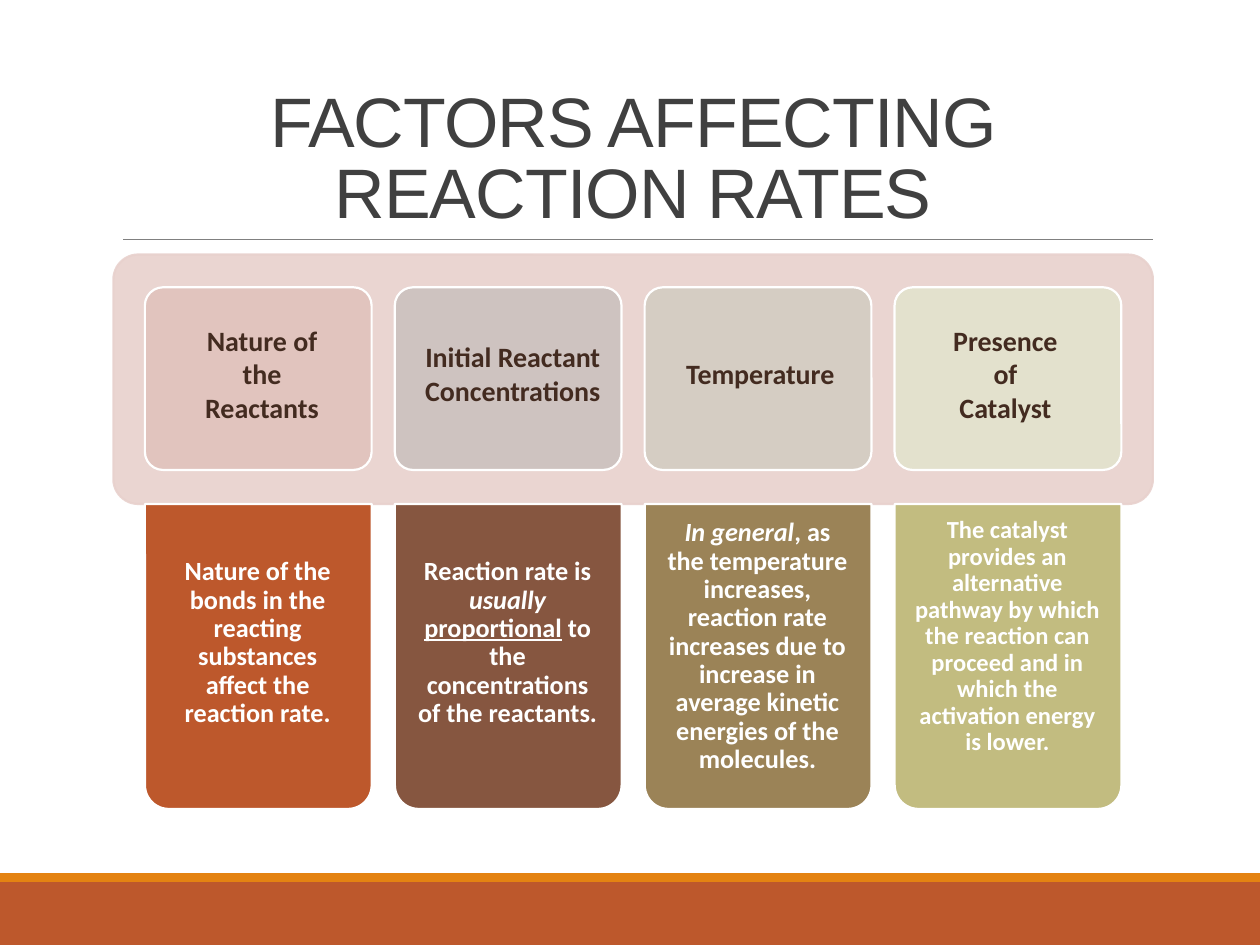
from dataclasses import dataclass

from lxml.etree import SubElement
from pptx import Presentation
from pptx.dml.color import RGBColor
from pptx.enum.shapes import MSO_CONNECTOR, MSO_SHAPE as Shape
from pptx.enum.text import MSO_ANCHOR as Anchor, PP_ALIGN as Align
from pptx.oxml.ns import qn
from pptx.util import Inches, Pt


@dataclass(frozen=True)
class Theme:
    title: str = "404040"
    label: str = "432B20"
    white: str = "FFFFFF"
    rule: str = "808080"
    panel: str = "E8D1CD"
    band: str = "BD582C"
    stripe: str = "E48312"
    title_font: str = "Arial"
    body_font: str = "Calibri"
    title_size: int = 40
    label_size: int = 16
    body_size: int = 15
    small_size: int = 14


THEME = Theme()
COLUMN_LEFT, COLUMN_WIDTH = 1.15, 1.8
COLUMN_PITCH = (7.1 - COLUMN_LEFT) / 3


@dataclass(frozen=True)
class Factor:
    label: str
    label_left: float
    label_width: float
    tint: str
    color: str
    runs: tuple  # (text, style) pairs; style is "", "italic" or "underline"
    size: int = THEME.body_size
    inset: float = 0.12
    top_inset: float = 0.12


FACTORS = (
    Factor("Nature of the Reactants", 1.51, 1.14, "E1C4BE", "BD582C",
           (("Nature of the bonds in the reacting substances affect the reaction rate.", ""),),
           top_inset=0.43),
    Factor("Initial Reactant Concentrations", 3.27, 1.6, "CEC3C0", "865640",
           (("Reaction rate is ", ""), ("usually ", "italic"), ("proportional", "underline"),
            (" to the concentrations of the reactants.", "")),
           top_inset=0.43),
    Factor("Temperature", 5.25, 1.57, "D5CDC3", "9B8357",
           (("In general", "italic"),
            (", as the temperature increases, reaction rate increases due to increase in "
             "average kinetic energies of the molecules.", ""))),
    Factor("Presence of Catalyst", 7.41, 1.14, "E3E1CD", "C2BC80",
           (("The catalyst provides an alternative pathway by which the reaction can "
             "proceed and in which the activation energy is lower.", ""),),
           size=THEME.small_size, inset=0.11, top_inset=0.11),
)


def rgb(color):
    return RGBColor.from_string(color)


def add_block(s, kind, box, fill, line=None, adjustments=(), rotation=0, opacity=None):
    sp = s.shapes.add_shape(kind, *map(Inches, box))
    sp.shadow.inherit = False
    sp.rotation = rotation
    for i, value in enumerate(adjustments):
        sp.adjustments[i] = value
    sp.fill.solid()
    sp.fill.fore_color.rgb = rgb(fill)
    if line:
        sp.line.color.rgb = rgb(line)
        sp.line.width = Pt(1.25)
    else:
        sp.line.fill.background()
    if opacity:
        for color in sp._element.spPr.iter(qn("a:srgbClr")):
            SubElement(color, qn("a:alpha"), val=str(opacity * 1000))


def add_rule(s, left, right, y):
    line = s.shapes.add_connector(MSO_CONNECTOR.STRAIGHT, *map(Inches, (left, y, right, y)))
    line.line.color.rgb = rgb(THEME.rule)
    line.line.width = Pt(0.5)
    SubElement(line._element.spPr, qn("a:effectLst"))


def add_run(p, text, size, color, font=THEME.body_font, bold=True, style=""):
    r = p.add_run()
    r.text = text
    r.font.name, r.font.size, r.font.bold = font, Pt(size), bold
    r.font.color.rgb = rgb(color)
    if style:
        setattr(r.font, style, True)
    return r


def add_text(s, box, runs, size, color, insets=(0.1, 0.05, 0.1, 0.05),
             anchor=Anchor.TOP, line_spacing=1.0):
    """Add a centred text box; insets run left, top, right, bottom."""
    tf = s.shapes.add_textbox(*map(Inches, box)).text_frame
    tf.word_wrap = True
    tf.vertical_anchor = anchor
    tf.margin_left, tf.margin_top, tf.margin_right, tf.margin_bottom = map(Inches, insets)
    p = tf.paragraphs[0]
    p.alignment = Align.CENTER
    p.line_spacing = line_spacing
    for text, style in runs:
        add_run(p, text, size, color, style=style)


def set_title(s, text):
    title = s.shapes.title
    title.left, title.top, title.width, title.height = map(Inches, (0.9, 0.31, 8.25, 1.59))
    tf = title.text_frame
    tf.word_wrap = True
    tf.vertical_anchor = Anchor.BOTTOM
    p = tf.paragraphs[0]
    p.alignment = Align.CENTER
    p.line_spacing = 0.85
    r = add_run(p, text, THEME.title_size, THEME.title, THEME.title_font, bold=False)
    r.font._element.set("spc", "-50")


def add_factor(s, left, factor):
    add_block(s, Shape.ROUNDED_RECTANGLE, (left, 2.28, COLUMN_WIDTH, 1.45),
              factor.tint, THEME.white, (0.1,))
    add_block(s, Shape.ROUND_2_SAME_RECTANGLE, (left, 4, COLUMN_WIDTH, 2.42),
              factor.color, THEME.white, (0.105, 0), rotation=180)
    add_text(s, (left + 0.05, 4, 1.69, 2.36), factor.runs, factor.size, THEME.white,
             (factor.inset, factor.top_inset, factor.inset, factor.inset), line_spacing=0.9)
    add_text(s, (factor.label_left, 2.51, factor.label_width, 0.91), [(factor.label, "")],
             THEME.label_size, THEME.label, anchor=Anchor.MIDDLE)


def main():
    prs = Presentation()
    prs.slide_width, prs.slide_height = Inches(10), Inches(7.5)
    s = prs.slides.add_slide(prs.slide_layouts[5])
    add_block(s, Shape.RECTANGLE, (0, 7, 10, 0.5), THEME.band)
    add_block(s, Shape.RECTANGLE, (0, 6.93, 10, 0.07), THEME.stripe)
    add_rule(s, 0.98, 9.15, 1.9)
    set_title(s, "FACTORS AFFECTING REACTION RATES")
    add_block(s, Shape.ROUNDED_RECTANGLE, (0.9, 2.02, 8.25, 1.98),
              THEME.panel, THEME.panel, (0.1,), opacity=90)
    for i, factor in enumerate(FACTORS):
        add_factor(s, COLUMN_LEFT + i * COLUMN_PITCH, factor)
    prs.save("out.pptx")


if __name__ == "__main__":
    main()
